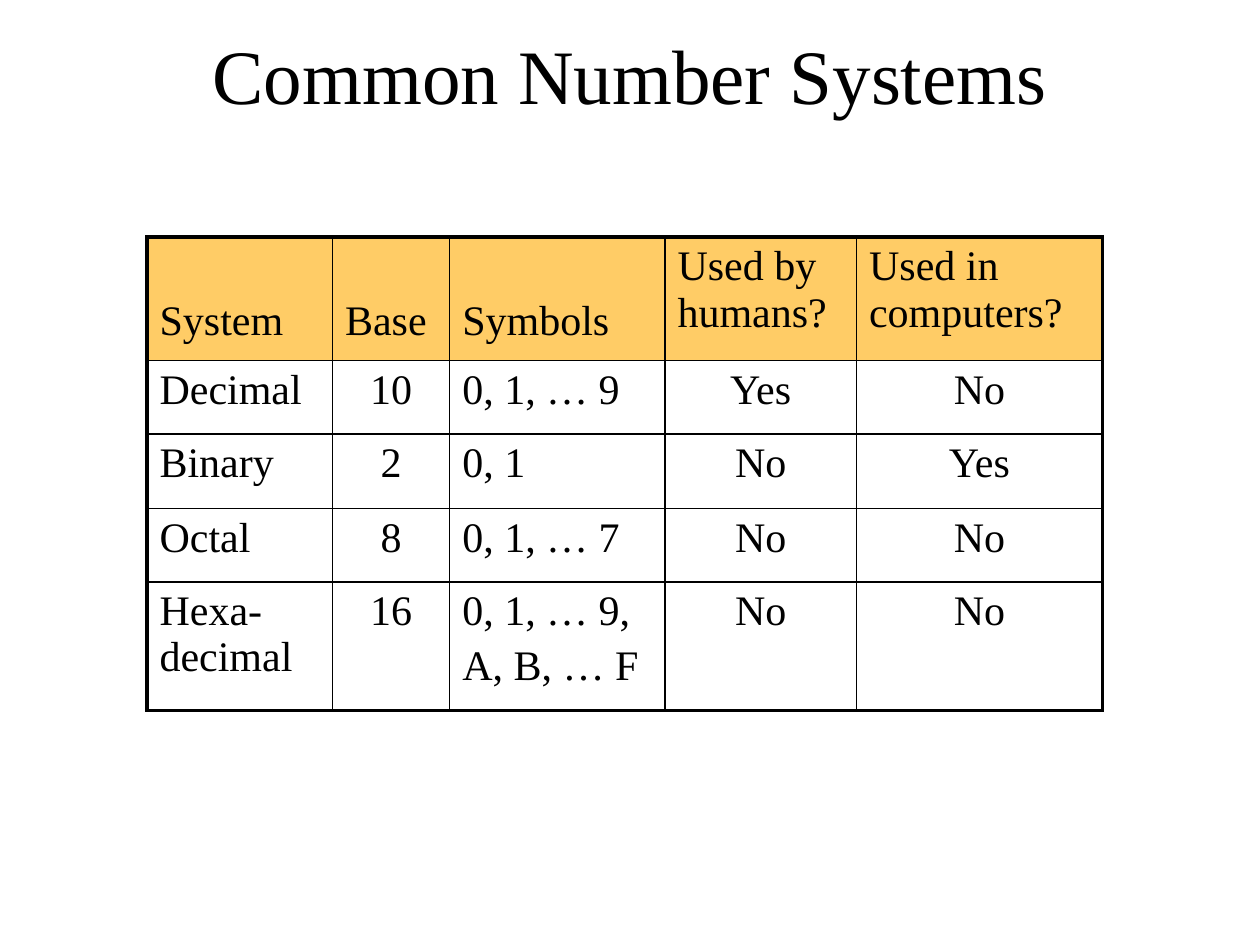
from lxml.etree import fromstring
from pptx import Presentation
from pptx.dml.color import RGBColor
from pptx.enum.text import MSO_ANCHOR as Anchor, PP_ALIGN as Align
from pptx.oxml.ns import nsdecls
from pptx.util import Pt

COLORS = {"ink": "000000", "header": "FFCC66"}
FONT = "Times New Roman"
COLUMN_WIDTHS = [106, 67, 123, 109.5, 140.5]
ROW_HEIGHTS = [70.5, 42, 42.5, 42, 73.5]
CENTERED_COLUMNS = {1, 3, 4}
LOWERED_HEADERS = 3
NUMBER_SYSTEMS = [
    ["System", "Base", "Symbols", "Used by humans?", "Used in computers?"],
    ["Decimal", "10", "0, 1, … 9", "Yes", "No"],
    ["Binary", "2", "0, 1", "No", "Yes"],
    ["Octal", "8", "0, 1, … 7", "No", "No"],
    ["Hexa-\vdecimal", "16", "0, 1, … 9,\nA, B, … F", "No", "No"],
]


def write_text(frame, text, size, align):
    """Fill a text frame and format its paragraphs and spans."""
    frame.text = text
    for index, para in enumerate(frame.paragraphs):
        para.alignment = align
        para.space_before = Pt(0.2 * size if index else 0)
        for span in para.runs:
            span.font.name = FONT
            span.font.size = Pt(size)
            span.font.color.rgb = RGBColor.from_string(COLORS["ink"])


def set_borders(cell, widths):
    """Draw the left, right, top and bottom borders of a cell."""
    properties = cell._tc.get_or_add_tcPr()
    for index, (side, width) in enumerate(zip("LRTB", widths)):
        border = fromstring(
            f'<a:ln{side} {nsdecls("a")} w="{Pt(width)}">'
            f'<a:solidFill><a:srgbClr val="{COLORS["ink"]}"/></a:solidFill>'
            f'</a:ln{side}>'
        )
        properties.insert(index, border)


def add_title(page, box, text):
    """Place the slide title in the given box."""
    title = page.shapes.title
    title.left, title.top, title.width, title.height = map(Pt, box)
    title.text_frame.vertical_anchor = Anchor.MIDDLE
    write_text(title.text_frame, text, 44, Align.CENTER)


def add_systems_table(page, box, rows):
    """Place the number systems table in the given box."""
    last_row, last_column = len(rows) - 1, len(rows[0]) - 1
    table = page.shapes.add_table(len(rows), len(rows[0]), *map(Pt, box)).table
    table.first_row = table.horz_banding = False
    for column, width in zip(table.columns, COLUMN_WIDTHS):
        column.width = Pt(width)
    for row, height in zip(table.rows, ROW_HEIGHTS):
        row.height = Pt(height)
    for r, texts in enumerate(rows):
        for c, text in enumerate(texts):
            cell = table.cell(r, c)
            centered = r > 0 and c in CENTERED_COLUMNS
            write_text(cell.text_frame, text, 24, Align.CENTER if centered else Align.LEFT)
            if r == 0:
                cell.fill.solid()
                cell.fill.fore_color.rgb = RGBColor.from_string(COLORS["header"])
                if c < LOWERED_HEADERS:
                    cell.margin_top = Pt(35)
            else:
                cell.fill.background()
            outer_sides = (c == 0, c == last_column, r == 0, r == last_row)
            set_borders(cell, [2.25 if outer else 1 for outer in outer_sides])


def main():
    """Build and save the deck."""
    deck = Presentation()
    deck.slide_width, deck.slide_height = Pt(720), Pt(540)
    page = deck.slides.add_slide(deck.slide_layouts[5])
    add_title(page, (54, 12, 612, 60), "Common Number Systems")
    table_box = (84, 135.5, sum(COLUMN_WIDTHS), sum(ROW_HEIGHTS))
    add_systems_table(page, table_box, NUMBER_SYSTEMS)
    deck.save("out.pptx")


if __name__ == "__main__":
    main()
